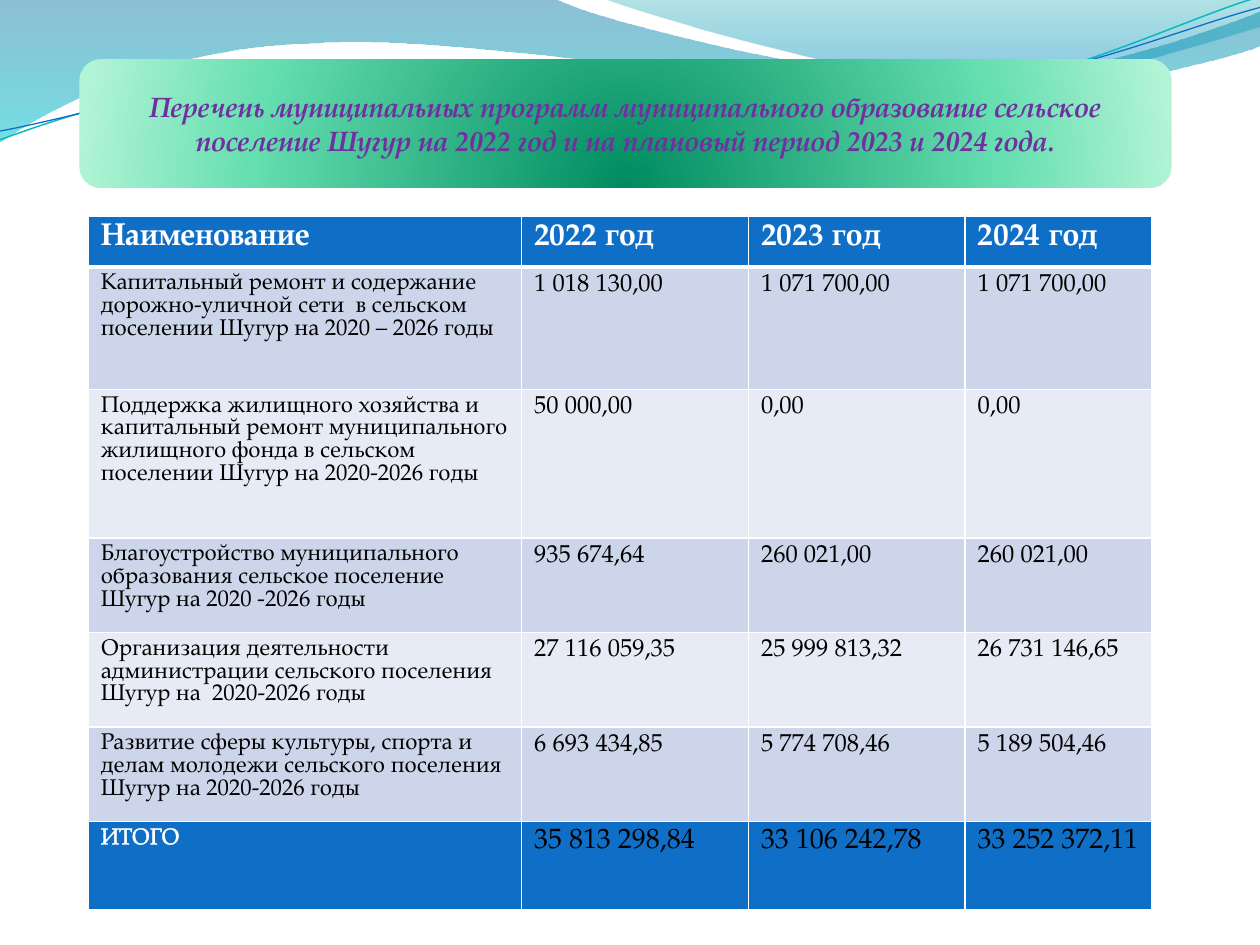
from math import cos, radians, sin
from pptx import Presentation
from pptx.dml.color import RGBColor
from pptx.enum.shapes import MSO_SHAPE
from pptx.enum.text import MSO_ANCHOR, PP_ALIGN
from pptx.oxml import parse_xml
from pptx.oxml.ns import nsdecls, qn
from pptx.util import Inches, Pt

FONT = "TeX Gyre Pagella"
BLUE, WHITE, BLACK, PURPLE = "0F6FC6", "FFFFFF", "000000", "7030A0"
BANDS = ["CCD5EA", "E7EBF5"]
TITLE = ("Перечень муниципальных программ муниципального образование сельское "
         "поселение Шугур на 2022 год и на плановый период 2023 и 2024 года.")
COL_WIDTHS = [3.44, 1.8, 1.72, 1.48]
ROW_HEIGHTS = [0.4, 0.97, 1.18, 0.75, 0.75, 0.75, 0.7]
ROWS = [
    ["Наименование", "2022 год", "2023 год", "2024 год"],
    ["Капитальный ремонт и содержание дорожно-уличной сети  в сельском поселении Шугур на 2020 – 2026 годы",
     "1 018 130,00", "1 071 700,00", "1 071 700,00"],
    ["Поддержка жилищного хозяйства и капитальный ремонт муниципального жилищного фонда "
     "в сельском поселении Шугур на 2020-2026 годы", "50 000,00", "0,00", "0,00"],
    ["Благоустройство муниципального образования сельское поселение Шугур на 2020 -2026 годы",
     "935 674,64", "260 021,00", "260 021,00"],
    ["Организация деятельности администрации сельского поселения Шугур на  2020-2026 годы",
     "27 116 059,35", "25 999 813,32", "26 731 146,65"],
    ["Развитие сферы культуры, спорта и делам молодежи сельского поселения Шугур на 2020-2026 годы",
     "6 693 434,85", "5 774 708,46", "5 189 504,46"],
    ["ИТОГО", "35 813 298,84", "33 106 242,78", "33 252 372,11"],
]
WAVES = [
    ([(0, 0), (4.4, -0.01), (4.76, 0.17, 6.64, 0.63, 7.58, 0.63), (8.53, 0.63, 9.58, 0.26, 10, 0.09),
      (10.01, 0.36), (9.83, 0.44, 8.7, 0.76, 7.46, 0.75), (6.22, 0.75, 3.82, 0.28, 2.57, 0.34),
      (1.29, 0.36, 0.46, 0.83, -0.01, 1.13)], [(0, "0074A1", 45), (100, "00C6CF", 55)]),
    ([(4.79, -0.01), (5.09, 0.11, 6.82, 0.62, 7.69, 0.65), (8.56, 0.69, 9.61, 0.32, 10, 0.21), (10, 0)],
     [(0, "00A1A9", 30), (80, "008BBF", 45)]),
]
STRANDS = [
    ([(0, 1.11), (0.48, 0.93, 1.58, 0.57, 2.77, 0.52), (3.95, 0.47, 5.93, 0.89, 7.13, 0.8),
      (8.33, 0.71, 9.38, 0.15, 9.98, -0.02)], (4.99, 0.58), "0AB8BF", 0.85),
    ([(0, 1.04), (0.47, 0.96, 1.64, 0.61, 2.83, 0.56), (4.03, 0.51, 5.97, 0.84, 7.17, 0.75),
      (8.36, 0.67, 9.41, 0.21, 10, 0.06)], (5, 0.59), BLUE, 0.75),
]
TILT = 2.7


def rgb(value):
    return RGBColor.from_string(value)


def set_gradient(sp, stops, direction):
    sp.fill.background()
    old = sp._element.spPr.find(qn("a:noFill"))
    gs = "".join(f'<a:gs pos="{pos * 1000}"><a:srgbClr val="{color}">'
                 f'<a:alpha val="{alpha * 1000}"/></a:srgbClr></a:gs>' for pos, color, alpha in stops)
    old.getparent().replace(old, parse_xml(
        f'<a:gradFill {nsdecls("a")} rotWithShape="1"><a:gsLst>{gs}</a:gsLst>{direction}</a:gradFill>'))


def pairs(step):
    return list(zip(step[::2], step[1::2]))


def turn(step, center, degrees):
    cx, cy = center
    c, n = cos(radians(degrees)), sin(radians(degrees))
    return [v for x, y in pairs(step)
            for v in (cx + (x - cx) * c - (y - cy) * n, cy + (x - cx) * n + (y - cy) * c)]


def add_curve(s, steps, left, top, close):
    points = [(left + Inches(x), top + Inches(y)) for step in steps for x, y in pairs(step)]
    builder = s.shapes.build_freeform(*points[0])
    builder.add_line_segments(points[1:], close=close)
    sp = builder.convert_to_shape()
    sp.shadow.inherit = False
    lines = iter(list(sp._element.spPr.iter(qn("a:lnTo"))))
    for step in steps[1:]:
        line = next(lines)
        if len(step) == 6:
            curve = parse_xml(f'<a:cubicBezTo {nsdecls("a")}/>')
            line.addprevious(curve)
            for part in (line, next(lines), next(lines)):
                curve.append(part[0])
                part.getparent().remove(part)
    return sp


def add_waves(s, left, top):
    for steps, stops in WAVES:
        sp = add_curve(s, steps, left, top, True)
        set_gradient(sp, stops, '<a:lin ang="5400000" scaled="1"/>')
        sp.line.fill.background()
    for steps, center, color, width in STRANDS:
        sp = add_curve(s, [turn(step, center, TILT) for step in steps], left, top, False)
        sp.rotation = 360 - TILT
        sp.fill.background()
        sp.line.color.rgb = rgb(color)
        sp.line.width = Pt(width)


def style(p, size, color, bold=False, italic=False):
    f = p.font
    f.name, f.size, f.bold, f.italic = FONT, Pt(size), bold, italic
    f.color.rgb = rgb(color)


def add_title(s, left, top, width, height):
    sp = s.shapes.add_shape(MSO_SHAPE.ROUNDED_RECTANGLE, left, top, width, height)
    sp.line.fill.background()
    set_gradient(sp, [(0, "008C60", 100), (68, "65DEB0", 100), (100, "B2F4D6", 100)],
                 '<a:path path="circle"><a:fillToRect l="50000" t="130000" r="50000" b="-30000"/></a:path>')
    sp.shadow.inherit = False
    tf = sp.text_frame
    tf.word_wrap = True
    tf.vertical_anchor = MSO_ANCHOR.MIDDLE
    p = tf.paragraphs[0]
    p.text = TITLE
    p.alignment = PP_ALIGN.CENTER
    style(p, 16, PURPLE, bold=True, italic=True)


def set_borders(cell, bottom):
    tcPr = cell._tc.get_or_add_tcPr()
    for i, (side, width) in enumerate([("L", 1), ("R", 1), ("T", 1), ("B", bottom)]):
        tcPr.insert(i, parse_xml(
            f'<a:ln{side} {nsdecls("a")} w="{Pt(width)}"><a:solidFill>'
            f'<a:srgbClr val="{WHITE}"/></a:solidFill></a:ln{side}>'))


def outline_text(r, color, width):
    r.font._element.insert(0, parse_xml(
        f'<a:ln {nsdecls("a")} w="{Pt(width)}"><a:solidFill>'
        f'<a:srgbClr val="{color}"/></a:solidFill></a:ln>'))


def add_programs(s, left, top, width, height):
    table = s.shapes.add_table(len(ROWS), len(COL_WIDTHS), left, top, width, height).table
    for col, size in zip(table.columns, COL_WIDTHS):
        col.width = Inches(size)
    for row, size in zip(table.rows, ROW_HEIGHTS):
        row.height = Inches(size)
    last = len(ROWS) - 1
    for i, texts in enumerate(ROWS):
        for j, text in enumerate(texts):
            cell = table.cell(i, j)
            cell.fill.solid()
            cell.fill.fore_color.rgb = rgb(BLUE if i in (0, last) else BANDS[(i - 1) % 2])
            set_borders(cell, 3 if i == 0 else 1)
            p = cell.text_frame.paragraphs[0]
            p.text = text
            if i == 0:
                style(p, 18, WHITE, bold=True)
            elif j == 0:
                style(p, 13, WHITE if i == last else BLACK)
                p.line_spacing = Pt(13)
            else:
                style(p, 16 if i == last else 14, BLACK)
    outline_text(table.cell(last, 0).text_frame.paragraphs[0].runs[0], WHITE, 1.45)


def main():
    prs = Presentation()
    prs.slide_width, prs.slide_height = Inches(10), Inches(7.5)
    s = prs.slides.add_slide(prs.slide_layouts[6])
    add_waves(s, Inches(0), Inches(0))
    add_title(s, Inches(0.63), Inches(0.47), Inches(8.67), Inches(1.02))
    add_programs(s, Inches(0.7), Inches(1.72), Inches(sum(COL_WIDTHS)), Inches(sum(ROW_HEIGHTS)))
    prs.save("out.pptx")


if __name__ == "__main__":
    main()
